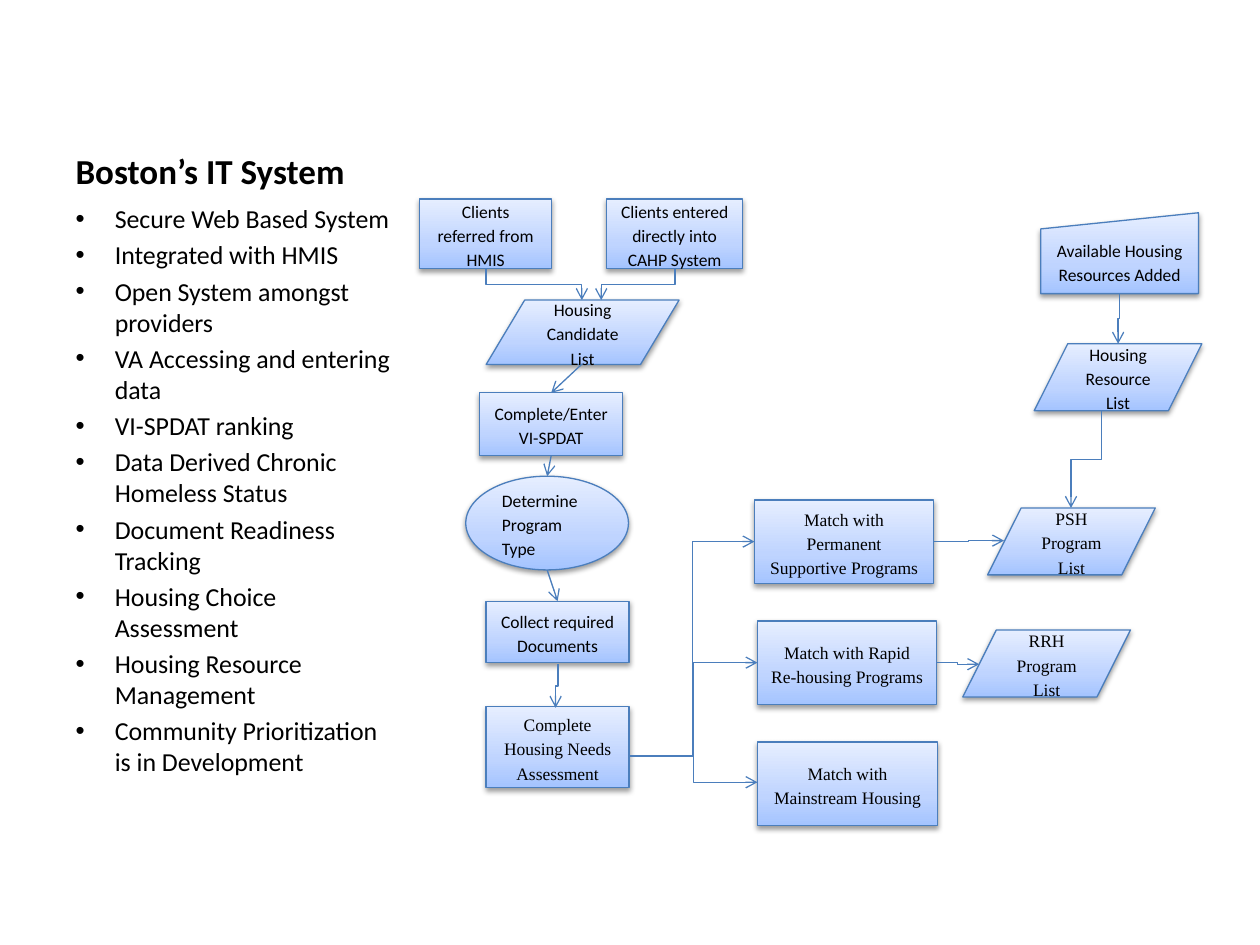
from lxml.etree import SubElement
from pptx import Presentation
from pptx.dml.color import RGBColor
from pptx.enum.shapes import MSO_CONNECTOR, MSO_SHAPE
from pptx.enum.text import MSO_ANCHOR, MSO_AUTO_SIZE, PP_ALIGN
from pptx.oxml.ns import qn
from pptx.util import Cm, Pt

COLORS = {
    "text": "000000",
    "line": "4B7EBC",
    "shadow": "000000",
    "bottom": "A4C4FF",
    "middle": "BFD4FF",
    "top": "E6EEFF",
}
GRADIENT_STOPS = [(0, "bottom"), (35, "middle"), (100, "top")]


def format_paragraph(paragraph, font_format, paragraph_format):
    for name, value in paragraph_format.items():
        setattr(paragraph, name, value)
    for name, value in font_format.items():
        setattr(paragraph.font, name, value)
    paragraph.font.color.rgb = RGBColor.from_string(COLORS["text"])


def add_arrow(kind, start_x, start_y, end_x, end_y):
    """Add a connector with an open arrowhead; positions are in centimetres."""
    connector = slide.shapes.add_connector(
        kind, Cm(start_x), Cm(start_y), Cm(end_x), Cm(end_y))
    connector.line.color.rgb = RGBColor.from_string(COLORS["line"])
    connector.line.width = Pt(0.75)
    properties = connector._element.spPr
    SubElement(properties.find(qn("a:ln")), qn("a:tailEnd"), type="arrow")
    SubElement(properties, qn("a:effectLst"))
    return connector


presentation = Presentation()
presentation.slide_width = Cm(25.4)
presentation.slide_height = Cm(19.05)
slide = presentation.slides.add_slide(presentation.slide_layouts[1])

# Title and list
title, body = slide.placeholders
for placeholder, (left, top, width, height) in (
        (title, (1.27, 0.76, 8.36, 3.23)), (body, (1.27, 3.96, 6.99, 12.55))):
    placeholder.left, placeholder.top = Cm(left), Cm(top)
    placeholder.width, placeholder.height = Cm(width), Cm(height)
    placeholder.text_frame.auto_size = MSO_AUTO_SIZE.NONE

title.text_frame.text = "Boston’s IT System"
title.text_frame.vertical_anchor = MSO_ANCHOR.BOTTOM
format_paragraph(title.text_frame.paragraphs[0],
                 {"name": "Calibri", "size": Pt(20), "bold": True},
                 {"alignment": PP_ALIGN.LEFT})

body.text_frame.text = "\n".join([
    "Secure Web Based System",
    "Integrated with HMIS",
    "Open System amongst providers",
    "VA Accessing and entering data",
    "VI-SPDAT ranking",
    "Data Derived Chronic Homeless Status",
    "Document Readiness Tracking",
    "Housing Choice Assessment",
    "Housing Resource Management",
    "Community Prioritization is in Development",
])
for paragraph in body.text_frame.paragraphs:
    paragraph_properties = paragraph._p.get_or_add_pPr()
    paragraph_properties.set("marL", str(Cm(0.79)))
    paragraph_properties.set("indent", str(-Cm(0.79)))
    SubElement(paragraph_properties, qn("a:buChar"), char="•")
    format_paragraph(paragraph, {"name": "Calibri", "size": Pt(14.8)}, {})
body.text_frame.paragraphs[0].space_before = Pt(0)

# Flowchart steps: text, shape, font, left, top, width, height
PROCESS = MSO_SHAPE.FLOWCHART_PROCESS
DATA = MSO_SHAPE.FLOWCHART_DATA
SANS, SERIF = "Calibri", "Times New Roman"
STEPS = [
    ("Clients referred from HMIS", PROCESS, SANS, 8.46, 4.01, 2.66, 1.4),
    ("Clients entered directly into CAHP System", PROCESS, SANS, 12.23, 4.01, 2.74, 1.4),
    ("Housing Candidate List", DATA, SANS, 9.8, 6.05, 3.89, 1.3),
    ("Complete/Enter VI-SPDAT", PROCESS, SANS, 9.67, 7.92, 2.88, 1.27),
    ("Determine Program Type", MSO_SHAPE.OVAL, SANS, 9.39, 9.6, 3.28, 1.89),
    ("Collect required Documents", PROCESS, SANS, 9.8, 12.12, 2.88, 1.24),
    ("Complete Housing Needs Assessment", PROCESS, SERIF, 9.8, 14.25, 2.88, 1.63),
    ("Match with Permanent Supportive Programs", PROCESS, SERIF, 15.21, 10.08, 3.61, 1.68),
    ("Match with Rapid Re-housing Programs", PROCESS, SERIF, 15.27, 12.52, 3.61, 1.68),
    ("Match with Mainstream Housing", PROCESS, SERIF, 15.27, 14.96, 3.63, 1.68),
    ("Available Housing Resources Added", MSO_SHAPE.FLOWCHART_MANUAL_INPUT, SANS,
     20.98, 4.29, 3.18, 1.63),
    ("Housing Resource List", DATA, SANS, 20.85, 6.93, 3.38, 1.35),
    ("PSH Program List", DATA, SERIF, 19.91, 10.24, 3.38, 1.35),
    ("RRH Program\nList", DATA, SERIF, 19.41, 12.7, 3.38, 1.35),
]
steps = {}
for text, kind, font_name, left, top, width, height in STEPS:
    shape = slide.shapes.add_shape(kind, Cm(left), Cm(top), Cm(width), Cm(height))
    steps[text] = shape
    shape.line.color.rgb = RGBColor.from_string(COLORS["line"])
    shape.line.width = Pt(0.75)

    shape.fill.gradient()
    shape.fill.gradient_angle = 90
    properties = shape._element.spPr
    stop_list = properties.find(qn("a:gradFill")).find(qn("a:gsLst"))
    for stop in list(stop_list):
        stop_list.remove(stop)
    for percent, color in GRADIENT_STOPS:
        stop = SubElement(stop_list, qn("a:gs"), pos=str(percent * 1000))
        SubElement(stop, qn("a:srgbClr"), val=COLORS[color])

    shape.shadow.inherit = False
    shadow = SubElement(properties.find(qn("a:effectLst")), qn("a:outerShdw"),
                        blurRad=str(Pt(3.1)), dist=str(Pt(1.6)), dir="5400000",
                        rotWithShape="0")
    shadow_color = SubElement(shadow, qn("a:srgbClr"), val=COLORS["shadow"])
    SubElement(shadow_color, qn("a:alpha"), val="38000")

    shape.text_frame.text = text
    shape.text_frame.word_wrap = True
    shape.text_frame.vertical_anchor = MSO_ANCHOR.MIDDLE
    alignment = PP_ALIGN.LEFT if kind == MSO_SHAPE.OVAL else PP_ALIGN.CENTER
    for paragraph in shape.text_frame.paragraphs:
        format_paragraph(paragraph, {"name": font_name, "size": Pt(10)},
                         {"alignment": alignment, "line_spacing": 1.15})
steps["Determine Program Type"].text_frame.paragraphs[0].space_after = Pt(10)

# Elbow arrows that leave sideways
for ends in [
    (12.7, 15.24, 15.21, 10.92),
    (12.7, 15.24, 15.27, 13.36),
    (12.7, 15.24, 15.27, 15.77),
    (18.82, 10.92, 20.24, 10.9),
    (18.87, 13.36, 19.74, 13.39),
]:
    add_arrow(MSO_CONNECTOR.ELBOW, *ends)

# Elbow arrows that leave downwards: a sideways elbow turned about its centre
for start_x, start_y, end_x, end_y in [
    (9.8, 5.41, 11.73, 6.05),
    (13.61, 5.41, 12.12, 6.05),
    (11.25, 13.39, 11.2, 14.27),
    (22.57, 5.92, 22.54, 6.93),
    (22.2, 8.28, 21.59, 10.24),
]:
    center_x, center_y = (start_x + end_x) / 2, (start_y + end_y) / 2
    half_height = abs(end_x - start_x) / 2
    goes_right = end_x > start_x
    half_width = (end_y - start_y) / 2 * (-1 if goes_right else 1)
    connector = add_arrow(MSO_CONNECTOR.ELBOW,
                          center_x - half_width, center_y - half_height,
                          center_x + half_width, center_y + half_height)
    transform = connector._element.spPr.find(qn("a:xfrm"))
    transform.set("rot", str((270 if goes_right else 90) * 60000))

# Straight arrows
arrow = add_arrow(MSO_CONNECTOR.STRAIGHT, 11.73, 7.34, 11.11, 7.92)
arrow.end_connect(steps["Complete/Enter VI-SPDAT"], 0)
arrow = add_arrow(MSO_CONNECTOR.STRAIGHT, 11.11, 9.19, 11.03, 9.6)
arrow.begin_connect(steps["Complete/Enter VI-SPDAT"], 2)
arrow.end_connect(steps["Determine Program Type"], 0)
arrow = add_arrow(MSO_CONNECTOR.STRAIGHT, 11.03, 11.49, 11.24, 12.12)
arrow.end_connect(steps["Collect required Documents"], 0)

presentation.save("out.pptx")
